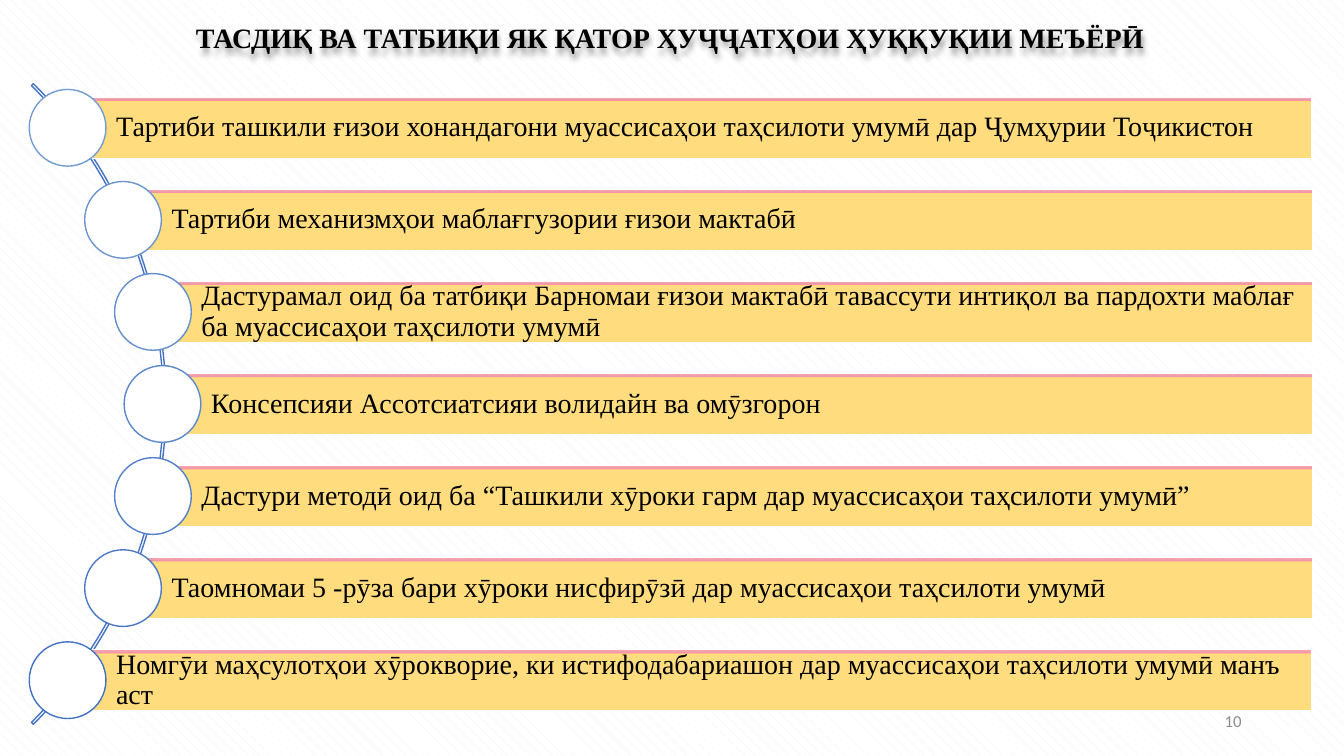
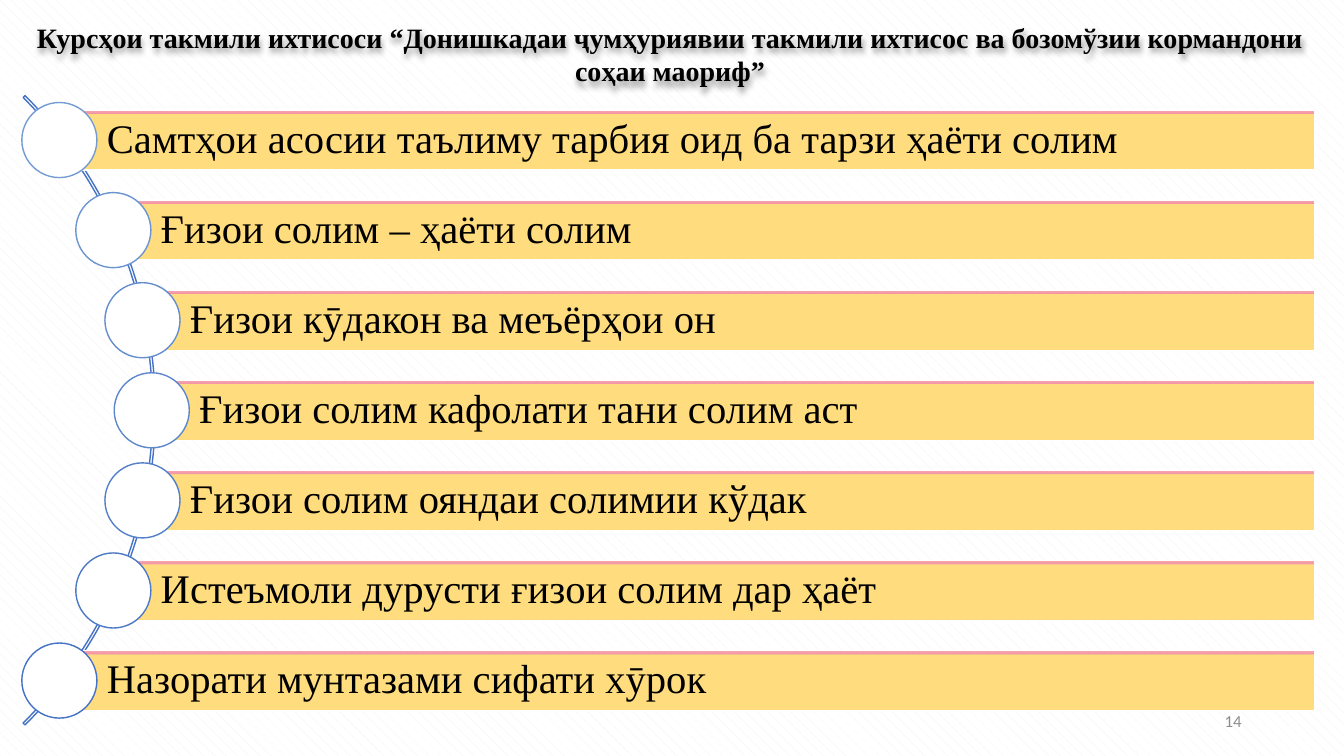
from dataclasses import dataclass
from math import sqrt

from lxml.etree import SubElement
from pptx import Presentation
from pptx.dml.color import RGBColor
from pptx.enum.dml import MSO_PATTERN
from pptx.enum.shapes import MSO_SHAPE
from pptx.enum.text import MSO_ANCHOR, MSO_AUTO_SIZE, PP_ALIGN
from pptx.oxml.ns import qn
from pptx.util import Cm, Pt


@dataclass(frozen=True)
class Theme:
    text: str = "000000"
    white: str = "FFFFFF"
    hatch: str = "F2F2F2"
    number: str = "8C8C8C"
    arc: str = "4472C4"
    first_ring: tuple = (0x74, 0x9C, 0xD3)
    last_ring: tuple = (0x44, 0x72, 0xC4)
    band_stops: tuple = ((0, "F6A7B3"), (6, "F495A4"), (7, "FFDC7D"))
    serif: str = "Times New Roman"
    sans: str = "Calibri"
    title_size: int = 20
    number_size: int = 12


@dataclass(frozen=True)
class ArcLayout:
    """Placement, in centimetres, of an arc of rings with their bands."""
    centre_x: float
    centre_y: float
    diameter: float
    step: float
    right: float
    text_size: int


LISTS = [
    ("10", "ТАСДИҚ ВА ТАТБИҚИ ЯК ҚАТОР ҲУҶҶАТҲОИ ҲУҚҚУҚИИ МЕЪЁРӢ",
     ArcLayout(-7.23, 10.18, 22.83, 2.32, 33.07, 20),
     ["Тартиби ташкили ғизои хонандагони муассисаҳои таҳсилоти умумӣ дар Ҷумҳурии Тоҷикистон",
      "Тартиби механизмҳои маблағгузории ғизои мактабӣ",
      "Дастурамал оид ба татбиқи Барномаи ғизои мактабӣ тавассути интиқол ва пардохти маблағ "
      "ба муассисаҳои таҳсилоти умумӣ",
      "Консепсияи Ассотсиатсияи волидайн ва омӯзгорон",
      "Дастури методӣ оид ба “Ташкили хӯроки гарм дар муассисаҳои таҳсилоти умумӣ”",
      "Таомномаи 5 -рӯза бари хӯроки нисфирӯзӣ дар муассисаҳои таҳсилоти умумӣ",
      "Номгӯи маҳсулотҳои хӯрокворие, ки истифодабариашон дар муассисаҳои таҳсилоти умумӣ "
      "манъ аст"]),
    ("14", "Курсҳои такмили ихтисоси “Донишкадаи ҷумҳуриявии такмили ихтисос ва бозомўзии "
           "кормандони соҳаи маориф”",
     ArcLayout(-7.3, 10.34, 22.43, 2.27, 33.13, 29),
     ["Самтҳои асосии таълиму тарбия оид ба тарзи ҳаёти солим",
      "Ғизои солим – ҳаёти солим",
      "Ғизои кӯдакон ва меъёрҳои он",
      "Ғизои солим кафолати тани солим аст",
      "Ғизои солим ояндаи солимии кўдак",
      "Истеъмоли дурусти ғизои солим дар ҳаёт",
      "Назорати мунтазами сифати хӯрок"]),
]


def write(box, text, *, size, font, color, bold=False, align=PP_ALIGN.LEFT,
          anchor=MSO_ANCHOR.MIDDLE, spacing=None):
    frame = box.text_frame
    frame.word_wrap = True
    frame.vertical_anchor = anchor
    para = frame.paragraphs[0]
    para.alignment = align
    para.line_spacing = spacing
    span = para.add_run()
    span.text = text
    span.font.size = Pt(size)
    span.font.name = font
    span.font.bold = bold
    span.font.color.rgb = RGBColor.from_string(color)


def add_color(parent, value):
    return SubElement(parent, qn("a:srgbClr"), val=value)


def add_soft_shadow(box):
    effects = SubElement(box._element.spPr, qn("a:effectLst"))
    shadow = SubElement(effects, qn("a:outerShdw"), blurRad="50800", dist="38100",
                        dir="5400000", algn="t", rotWithShape="0")
    SubElement(add_color(shadow, "000000"), qn("a:alpha"), val="40000")


class SlideBuilder:
    def __init__(self, theme):
        self.theme = theme
        self.deck = Presentation()
        self.deck.slide_width, self.deck.slide_height = Cm(33.87), Cm(19.05)
        self.page = None
        hatch = self.deck.slide_master.background.fill
        hatch.patterned()
        hatch.pattern = MSO_PATTERN.SHINGLE
        hatch.fore_color.rgb = RGBColor.from_string(theme.hatch)
        hatch.back_color.rgb = RGBColor.from_string(theme.white)

    def new_page(self):
        self.page = self.deck.slides.add_slide(self.deck.slide_layouts[6])

    def shape(self, kind, left, top, width, height, line):
        shape = self.page.shapes.add_shape(kind, Cm(left), Cm(top), Cm(width), Cm(height))
        shape.shadow.inherit = False
        shape.line.color.rgb = RGBColor.from_string(line)
        shape.line.width = Pt(1)
        return shape

    def title(self, text):
        box = self.page.shapes.add_textbox(Cm(0.5), Cm(0.38), Cm(32.77), Cm(1.12))
        write(box, text, size=self.theme.title_size, font=self.theme.serif,
              color=self.theme.text, bold=True, align=PP_ALIGN.CENTER, anchor=MSO_ANCHOR.TOP)
        box.text_frame.auto_size = MSO_AUTO_SIZE.SHAPE_TO_FIT_TEXT
        add_soft_shadow(box)

    def page_number(self, text):
        box = self.page.shapes.add_textbox(Cm(23.92), Cm(17.65), Cm(7.62), Cm(1.01))
        write(box, text, size=self.theme.number_size, font=self.theme.sans,
              color=self.theme.number, align=PP_ALIGN.RIGHT)

    def arc(self, layout):
        radius = layout.diameter / 2
        arc = self.shape(MSO_SHAPE.BLOCK_ARC, layout.centre_x - radius,
                         layout.centre_y - radius, layout.diameter, layout.diameter,
                         self.theme.arc)
        arc.fill.background()
        for index, value in enumerate((189, 27, 0.003)):
            arc.adjustments[index] = value

    def band(self, text, left, middle, layout):
        height = layout.step * 2 / 3
        band = self.shape(MSO_SHAPE.RECTANGLE, left, middle - height / 2,
                          layout.right - left, height, self.theme.white)
        band.fill.gradient()
        band.fill.gradient_angle = 270
        stops = band._element.spPr.find(".//" + qn("a:gsLst"))
        stops.clear()
        for percent, color in self.theme.band_stops:
            add_color(SubElement(stops, qn("a:gs"), pos=str(percent * 1000)), color)
        frame = band.text_frame
        frame.margin_top = frame.margin_right = frame.margin_bottom = Pt(layout.text_size / 5)
        frame.margin_left = Cm(height * 0.79)
        write(band, text, size=layout.text_size, font=self.theme.serif,
              color=self.theme.text, spacing=0.9)

    def ring(self, x, y, size, progress):
        """Draw a ring whose outline shifts from the first to the last ring colour."""
        channels = (int(start + (end - start) * progress) for start, end
                    in zip(self.theme.first_ring, self.theme.last_ring))
        ring = self.shape(MSO_SHAPE.OVAL, x - size / 2, y - size / 2, size, size,
                          str(RGBColor(*channels)))
        ring.fill.solid()
        ring.fill.fore_color.rgb = RGBColor.from_string(self.theme.white)

    def arc_list(self, items, layout):
        self.arc(layout)
        radius = layout.diameter / 2 - 0.09
        last = len(items) - 1
        for index, text in enumerate(items):
            offset = (index - last / 2) * layout.step
            x = layout.centre_x + sqrt(radius ** 2 - offset ** 2)
            y = layout.centre_y + offset
            self.band(text, x, y, layout)
            self.ring(x, y, layout.step * 5 / 6, index / last)


def main():
    builder = SlideBuilder(Theme())
    for number, title, layout, items in LISTS:
        builder.new_page()
        builder.title(title)
        builder.arc_list(items, layout)
        builder.page_number(number)
    builder.deck.save("out.pptx")


if __name__ == "__main__":
    main()
